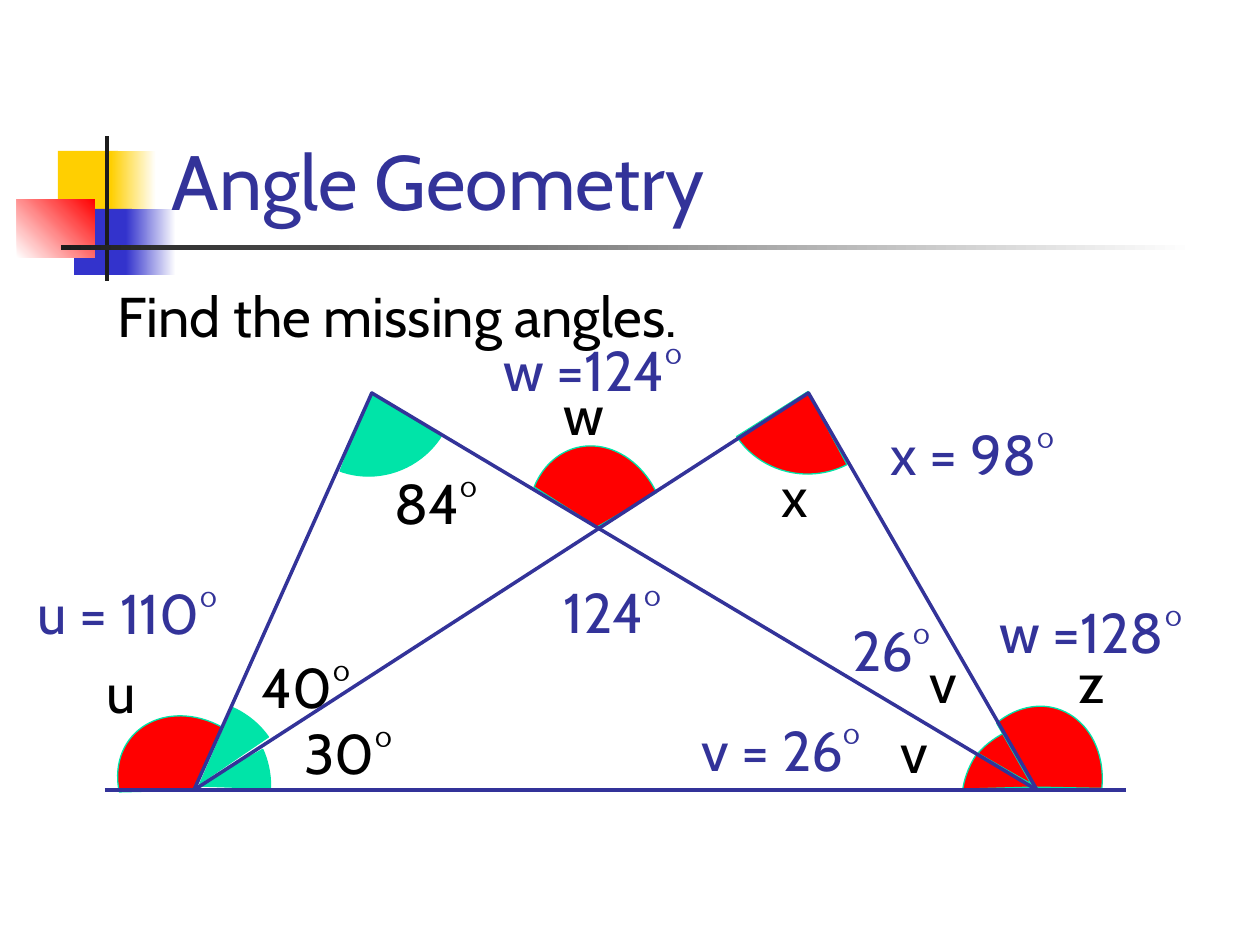
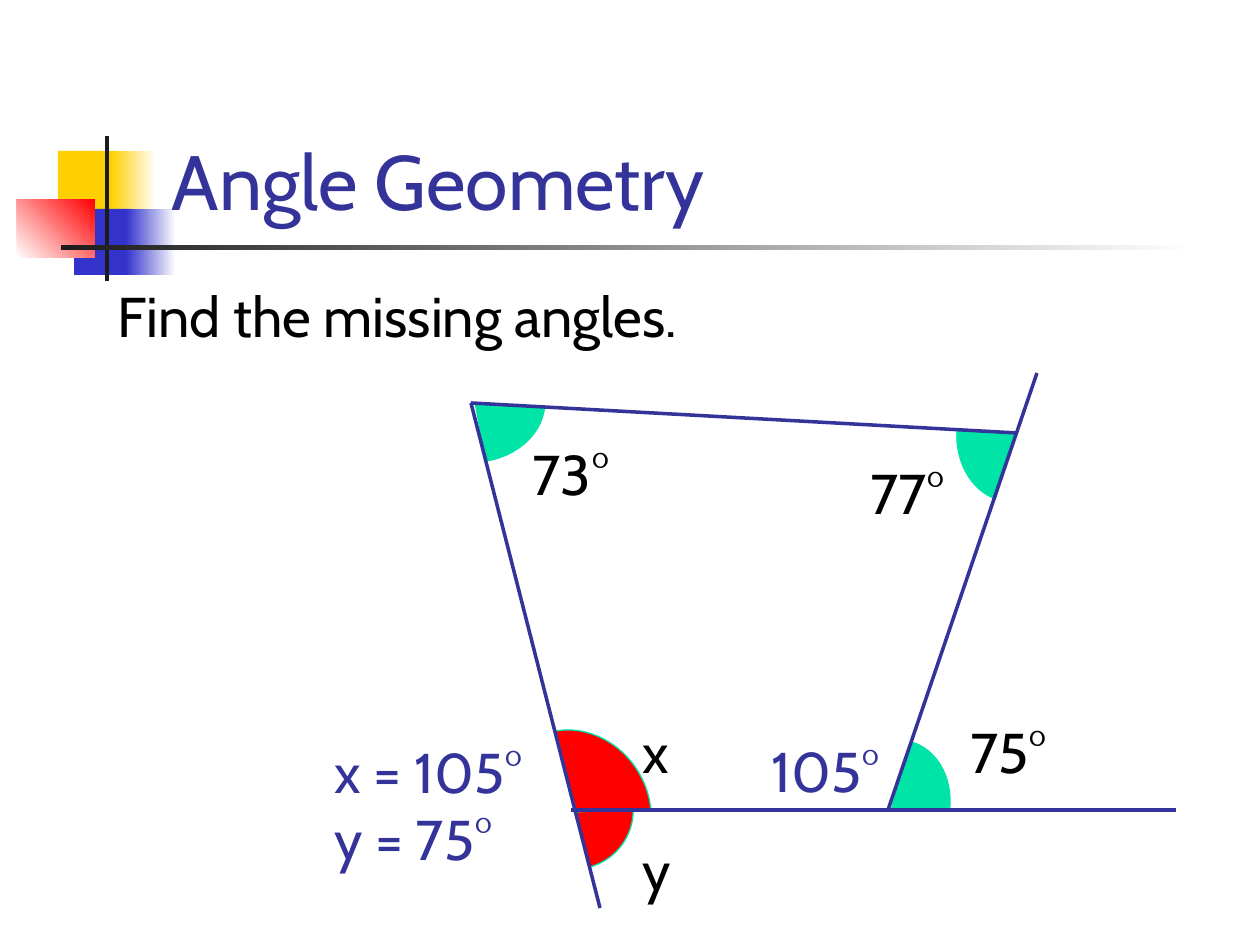
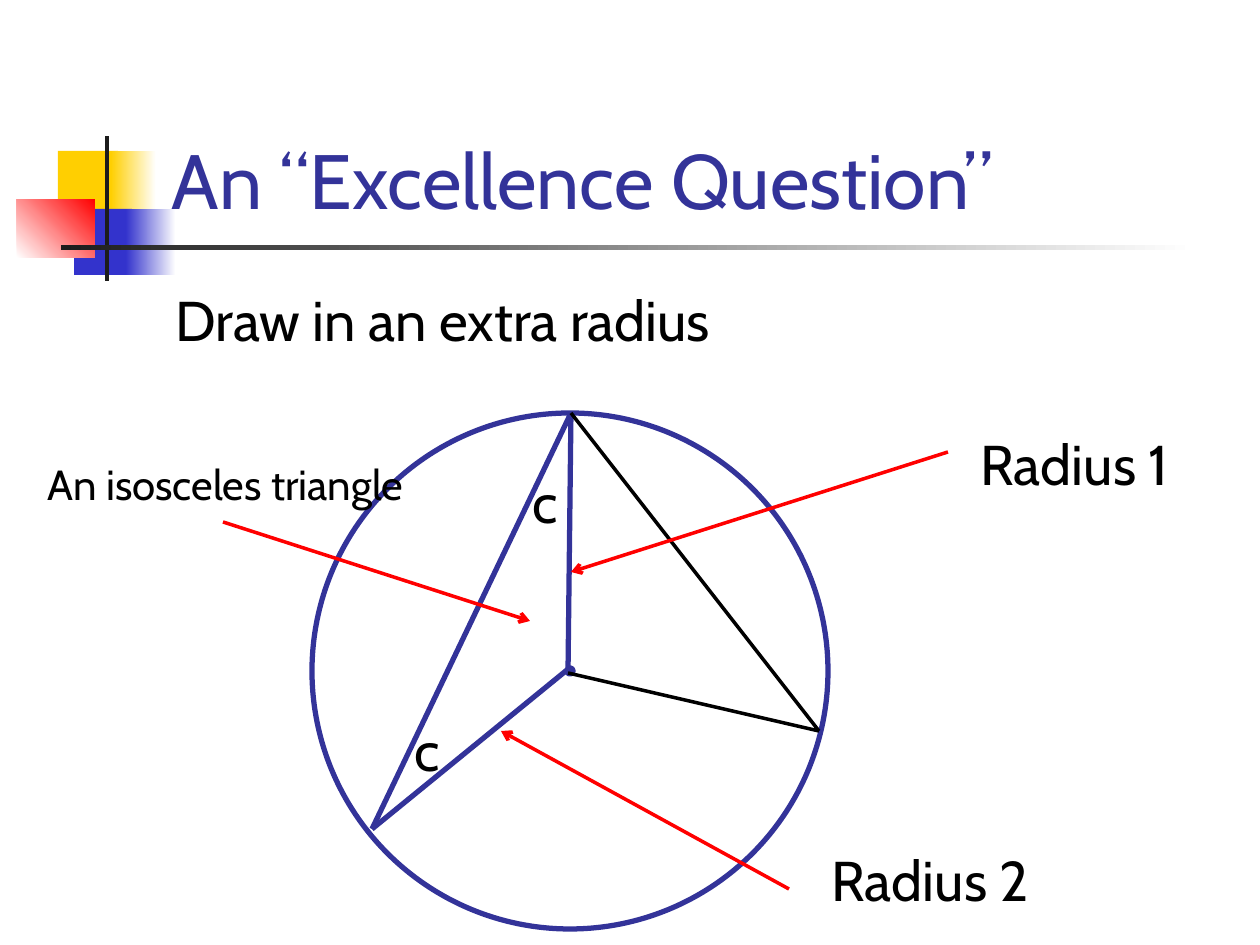
from lxml.etree import SubElement as Sub
from pptx import Presentation
from pptx.dml.color import RGBColor
from pptx.enum.shapes import MSO_CONNECTOR as Link, MSO_SHAPE as Kind
from pptx.enum.text import MSO_ANCHOR as Anchor, MSO_AUTO_SIZE as Fit, PP_ALIGN as Align
from pptx.oxml.ns import qn
from pptx.util import Pt

SCALE = 914400 / 126
NAVY, BLUE, RED, GREEN = "333399", "3333CC", "FF0000", "00E4A8"
GOLD, INK, BLACK, WHITE = "FFCF01", "1C1C1C", "000000", "FFFFFF"


def px(*nums):
    """Turn pixel lengths into EMU."""
    return [round(num * SCALE) for num in nums]


def rgb(code):
    """Turn a hex string into a colour."""
    return RGBColor.from_string(code)


def put(item, **vals):
    """Set attributes from format values."""
    for key, val in vals.items():
        setattr(item, key, val)


def write(frame, lines, size, color, **vals):
    """Fill a text frame with styled paragraphs."""
    put(frame, **vals)
    frame.text = "\n".join(lines)
    for para in frame.paragraphs:
        put(para, alignment=Align.LEFT)
        put(para.font, name="Cabin", size=Pt(size))
        para.font.color.rgb = rgb(color)


def shape(slide, kind, box, fill=None, line=None, width=0):
    """Add a preset shape with a plain, graded or empty fill."""
    item = slide.shapes.add_shape(kind, *px(*box))
    item.shadow.inherit = False
    if fill is None:
        item.fill.background()
    elif isinstance(fill, str):
        item.fill.solid()
        item.fill.fore_color.rgb = rgb(fill)
    else:
        *codes, angle = fill
        item.fill.gradient()
        item.fill.gradient_angle = angle
        for stop, code in zip(item.fill.gradient_stops, codes):
            stop.color.rgb = rgb(code)
    if line:
        item.line.color.rgb = rgb(line)
        item.line.width = Pt(width)
    else:
        item.line.fill.background()
    return item


def sector(slide, box, turn, start, end, fill):
    """Mark an angle with a turned pie, angles in degrees."""
    item = shape(slide, Kind.PIE, box, fill, GREEN)
    item.rotation = turn
    for num, angle in enumerate((start, end)):
        item.adjustments[num] = angle * 0.6


def line(slide, ends, color=NAVY, width=2, arrow=False):
    """Draw a straight line, with an arrowhead at its end if asked."""
    item = slide.shapes.add_connector(Link.STRAIGHT, *px(*ends))
    item.line.color.rgb = rgb(color)
    item.line.width = Pt(width)
    if arrow:
        Sub(item.line._get_or_add_ln(), qn("a:tailEnd"), type="arrow")
    Sub(item.element.spPr, qn("a:effectLst"))


def label(slide, box, text, color=BLACK, size=32, wrap=True):
    """Add a text label."""
    frame = slide.shapes.add_textbox(*px(*box)).text_frame
    write(frame, text.split("\n"), size, color, word_wrap=wrap,
          auto_size=Fit.SHAPE_TO_FIT_TEXT)


def bullet(slide, box, text):
    """Add the task line with a square bullet."""
    frame = slide.shapes.add_textbox(*px(*box)).text_frame
    props = frame.paragraphs[0]._p.get_or_add_pPr()
    put_off = px(48)[0]
    props.set("marL", str(put_off))
    props.set("indent", str(-put_off))
    Sub(Sub(props, qn("a:buClr")), qn("a:srgbClr"), val=BLUE)
    Sub(props, qn("a:buSzPct"), val="60000")
    Sub(props, qn("a:buChar"), char="■")
    write(frame, [text], 32, BLACK, word_wrap=True)


def start(prs, title, box):
    """Add a slide and set its title."""
    slide = prs.slides.add_slide(prs.slide_layouts[5])
    head = slide.shapes.title
    put(head, **dict(zip(("left", "top", "width", "height"), px(*box))))
    write(head.text_frame, [title], 44, NAVY, word_wrap=True,
          vertical_anchor=Anchor.BOTTOM, auto_size=Fit.NONE)
    return slide


def brand(prs, slide):
    """Draw the blocks and rules, and hand them to the shared layout."""
    layout = prs.slide_layouts[5]
    for hold in list(layout.placeholders)[1:]:
        layout.shapes.element.remove(hold.element)
    for box, fill in (
        ((58, 151, 60, 66), GOLD),
        ((111, 151, 45, 66), (GOLD, WHITE, 0)),
        ((74, 209, 58, 66), BLUE),
        ((126, 209, 50, 66), (BLUE, WHITE, 0)),
        ((17, 199, 78, 59), (WHITE, RED, 45)),
        ((105, 136, 4, 145), INK),
        ((61, 245, 1134, 5), (INK, WHITE, 0)),
    ):
        layout.shapes.element.append(shape(slide, Kind.RECTANGLE, box, fill).element)


def crossed(prs):
    """Build the slide with two crossing triangles."""
    slide = start(prs, "Angle Geometry", (159, 96, 640, 136))
    brand(prs, slide)
    for pie in (
        ((723, 309, 170, 165), 175.3, 246.6, 332.5, RED),
        ((515, 459, 164, 136), 255.4, 317.2, 74.5, RED),
        ((961, 723, 164, 136), 170, 40.1, 75.8, RED),
        ((955, 719, 164, 136), 134.6, 43.7, 73.8, RED),
        ((286, 310, 170, 165), 139, 253.1, 332.5, GREEN),
        ((112, 722, 164, 136), 220.7, 317.9, 73.8, RED),
        ((951, 719, 164, 136), 287.3, 313.1, 73.8, RED),
        ((115, 701, 170, 165), 35.2, 258.4, 290.6, GREEN),
        ((116, 713, 163, 146), 90, 240.7, 271.9, GREEN),
    ):
        sector(slide, *pie)
    bullet(slide, (105, 275, 711, 145), "Find the missing angles.")
    line(slide, (105, 790, 1126, 790))
    for peak in (0.211, 0.729):
        item = shape(slide, Kind.ISOSCELES_TRIANGLE, (194, 393, 843, 397), None, NAVY, 2)
        item.adjustments[0] = peak
    for left, top, text in ((292, 712, "30°"), (249, 646, "40°"), (382, 462, "84°"),
                            (94, 651, "u"), (551, 373, "w"), (888, 711, "v"),
                            (769, 455, "x"), (917, 641, "v"), (1066, 641, "z")):
        label(slide, (left, top, 139 if "°" in text else 87, 81), text)
    for left, top, width, text in (
        (25, 572, 268, "u = 110°"), (689, 709, 268, "v = 26°"),
        (551, 571, 160, "124°"), (491, 329, 297, "w =124°"),
        (840, 609, 149, "26°"), (987, 591, 253, "w =128°"),
        (878, 413, 228, "x = 98°"),
    ):
        label(slide, (left, top, width, 81), text, NAVY)


def foursided(prs):
    """Build the slide with the four-sided figure."""
    slide = start(prs, "Angle Geometry", (159, 96, 640, 136))
    for pie in (
        ((519, 756, 115, 112), 129.8, 226.9, 307.6, RED),
        ((494, 736, 163, 146), 56.3, 199.4, 304.1, RED),
        ((406, 347, 139, 115), 354, 9.6, 85.7, GREEN),
        ((945, 375, 139, 115), 96.6, 9.6, 85.7, GREEN),
        ((822, 751, 139, 115), 287.3, 359.3, 73.8, GREEN),
    ):
        sector(slide, *pie)
    bullet(slide, (105, 275, 711, 118), "Find the missing angles.")
    for ends in ((1176, 810, 571, 810), (888, 810, 1037, 373),
                 (1017, 433, 471, 403), (600, 908, 471, 403)):
        line(slide, ends)
    for left, top, text in ((520, 433, "73°"), (858, 452, "77°"), (958, 711, "75°"),
                            (630, 829, "y"), (630, 711, "x")):
        label(slide, (left, top, 139 if "°" in text else 87, 81), text)
    label(slide, (759, 730, 169, 81), "105°", NAVY)
    label(slide, (322, 731, 268, 149), "x = 105°\ny = 75°", NAVY)


def circle(prs):
    """Build the slide with the circle and its radii."""
    slide = start(prs, "An “Excellence Question”", (159, 29, 1074, 202))
    bullet(slide, (163, 279, 1071, 567), "Draw in an extra radius")
    shape(slide, Kind.OVAL, (312, 413, 516, 516), WHITE, NAVY, 3)
    shape(slide, Kind.OVAL, (567, 668, 6, 6), WHITE, NAVY, 3)
    for ends in ((571, 413, 372, 829), (372, 829, 567, 670), (571, 413, 568, 673)):
        line(slide, ends, width=3)
    for ends in ((571, 413, 819, 731), (819, 731, 568, 673)):
        line(slide, ends, BLACK)
    for ends in ((948, 452, 571, 572), (789, 889, 501, 731), (223, 522, 530, 621)):
        line(slide, ends, RED, arrow=True)
    for left, top, width, text in ((520, 461, 52, "c"), (402, 709, 52, "c"),
                                   (968, 423, 239, "Radius 1"),
                                   (819, 839, 239, "Radius 2")):
        label(slide, (left, top, width, 81), text, wrap=False)
    label(slide, (35, 452, 406, 63), "An isosceles triangle", size=24, wrap=False)


def main():
    """Build and save the deck."""
    prs = Presentation()
    put(prs, **dict(zip(("slide_width", "slide_height"), px(1260, 945))))
    for build in (crossed, foursided, circle):
        build(prs)
    prs.save("out.pptx")


if __name__ == "__main__":
    main()
